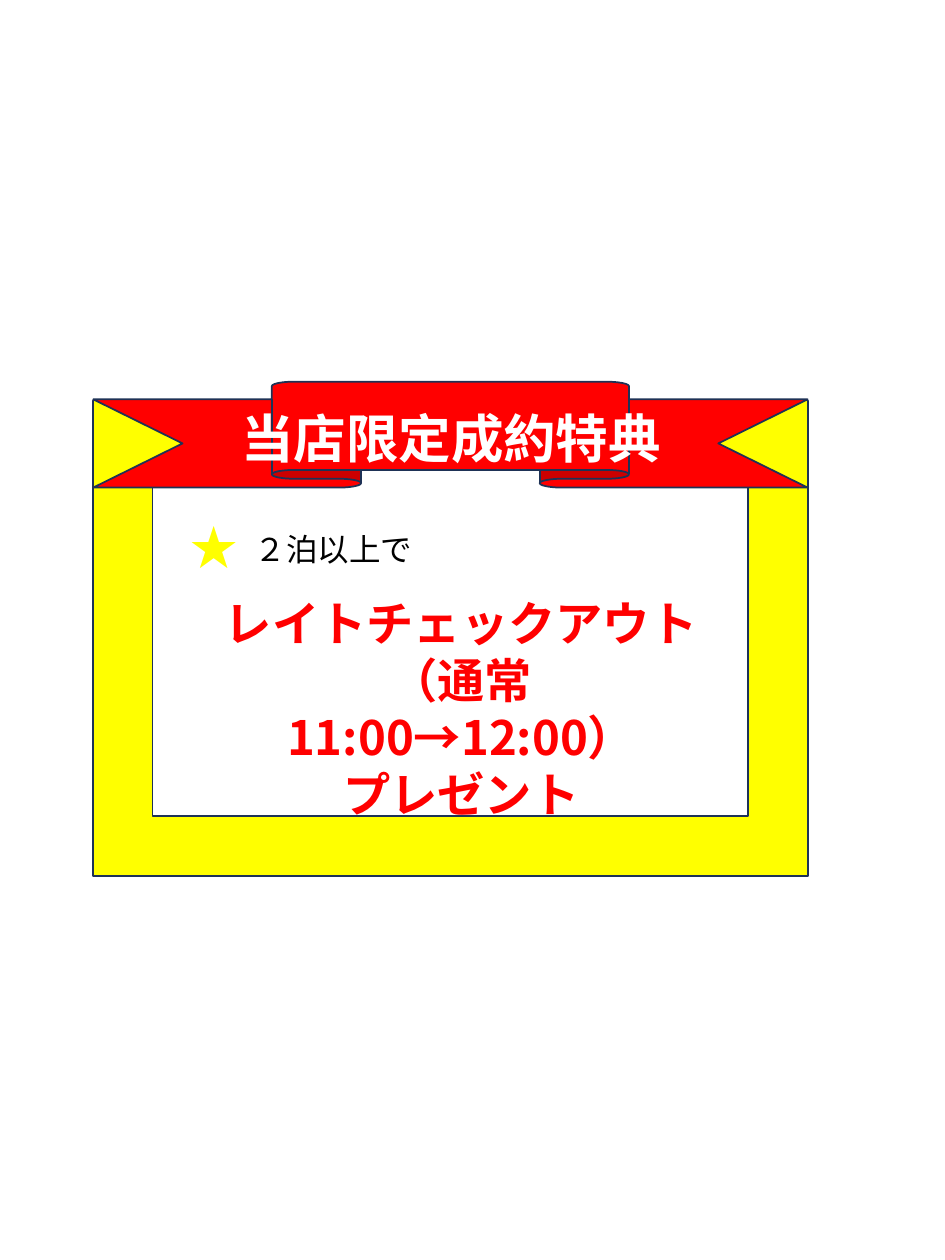
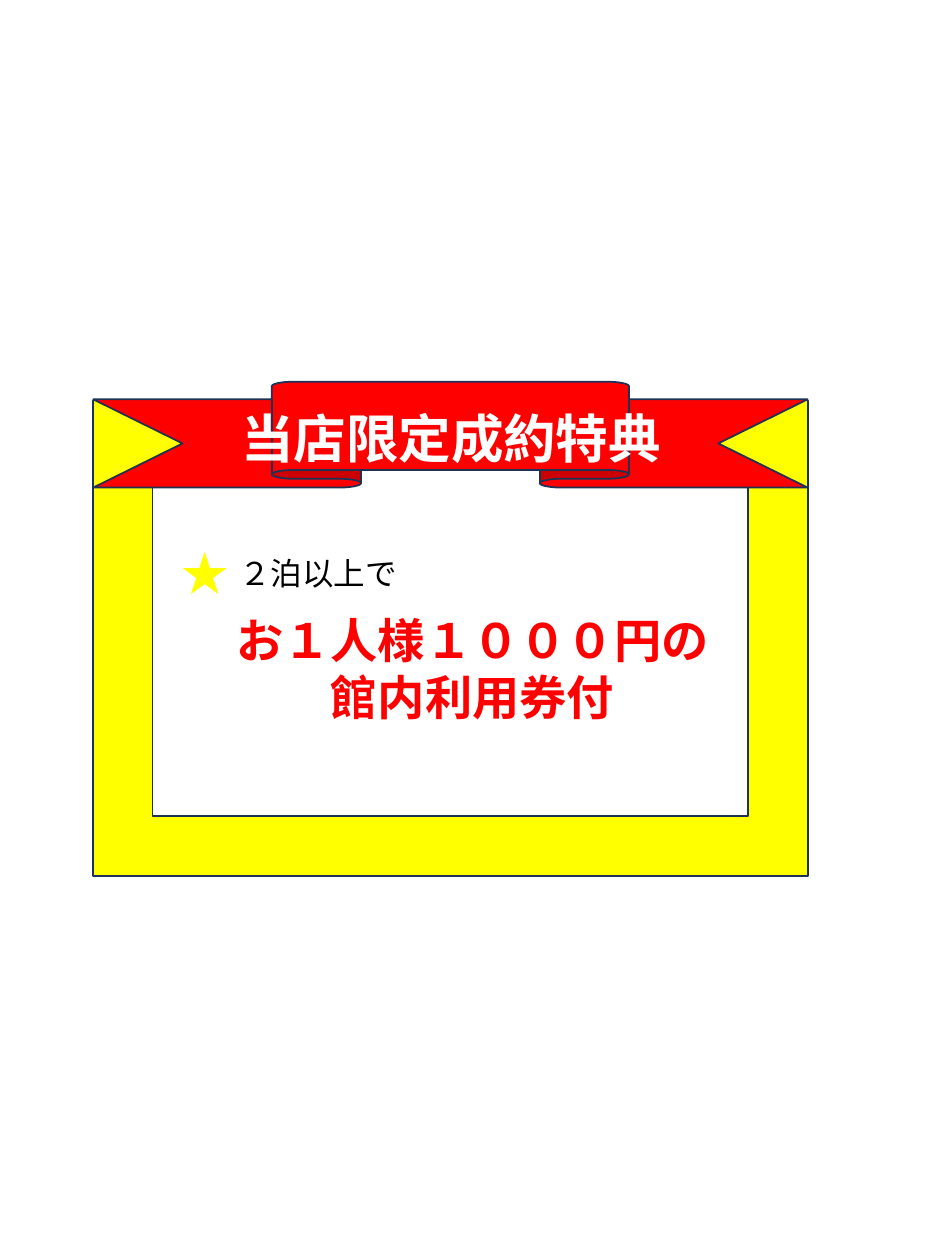
from dataclasses import dataclass

from lxml.etree import SubElement
from pptx import Presentation
from pptx.dml.color import RGBColor
from pptx.enum.shapes import MSO_SHAPE
from pptx.enum.text import MSO_AUTO_SIZE, PP_ALIGN
from pptx.oxml.ns import qn
from pptx.slide import Slide
from pptx.util import Inches, Pt

FACE = "Noto Sans CJK JP"
HUES = {
    "yellow": "FFFF00",
    "red": "FF0000",
    "navy": "1E3256",
    "white": "FFFFFF",
    "black": "000000",
}
FRAME = {
    "word_wrap": True,
    "auto_size": MSO_AUTO_SIZE.SHAPE_TO_FIT_TEXT,
    "margin_left": Inches(0.07),
    "margin_right": Inches(0.07),
    "margin_top": Inches(0.04),
    "margin_bottom": Inches(0.04),
}


@dataclass(frozen=True)
class Style:
    size: int
    hue: str
    bold: bool = True


@dataclass(frozen=True)
class Box:
    left: float
    top: float
    width: float
    height: float

    def place(self) -> list[int]:
        return [Inches(n) for n in (self.left, self.top, self.width, self.height)]


@dataclass(frozen=True)
class Panel:
    kind: MSO_SHAPE
    box: Box
    hue: str


@dataclass(frozen=True)
class Label:
    lines: tuple[str, ...]
    box: Box
    style: Style


@dataclass(frozen=True)
class Offer:
    star: Box
    terms: Box
    gift: Box
    lines: tuple[str, ...]


TITLE = Style(30, "white")
STAR = Style(27, "yellow")
TERMS = Style(18, "black", False)
GIFT = Style(27, "red")

PANELS = (
    Panel(MSO_SHAPE.FRAME, Box(0.74, 3.18, 5.67, 3.77), "yellow"),
    Panel(MSO_SHAPE.UP_RIBBON, Box(0.74, 3.03, 5.67, 0.84), "red"),
)
BANNER = Label(("当店限定成約特典",), Box(1.82, 3.18, 3.52, 0.58), TITLE)
OFFERS = (
    Offer(
        Box(1.35, 4.07, 0.7, 0.53),
        Box(1.94, 4.17, 1.41, 0.38),
        Box(1.69, 4.68, 3.94, 1.44),
        ("レイトチェックアウト", "（通常11:00→12:00）", "プレゼント"),
    ),
    Offer(
        Box(1.28, 4.28, 0.7, 0.53),
        Box(1.82, 4.36, 1.41, 0.38),
        Box(1.78, 4.81, 3.94, 0.98),
        ("お１人様１０００円の", "館内利用券付"),
    ),
)


def tint(name: str) -> RGBColor:
    return RGBColor.from_string(HUES[name])


def add_panel(slide: Slide, panel: Panel) -> None:
    shape = slide.shapes.add_shape(panel.kind, *panel.box.place())
    shape.shadow.inherit = False
    shape.fill.solid()
    shape.fill.fore_color.rgb = tint(panel.hue)
    shape.line.color.rgb = tint("navy")
    shape.line.width = Pt(1)


def add_label(slide: Slide, label: Label) -> None:
    frame = slide.shapes.add_textbox(*label.box.place()).text_frame
    for key, value in FRAME.items():
        setattr(frame, key, value)
    style = label.style
    look = {"name": FACE, "size": Pt(style.size), "bold": style.bold}
    for row, line in enumerate(label.lines):
        para = frame.add_paragraph() if row else frame.paragraphs[0]
        para.alignment = PP_ALIGN.CENTER
        run = para.add_run()
        run.text = line
        for key, value in look.items():
            setattr(run.font, key, value)
        run.font.color.rgb = tint(style.hue)
        SubElement(run._r.get_or_add_rPr(), qn("a:ea"), typeface=FACE)


def add_offer(slide: Slide, offer: Offer) -> None:
    for panel in PANELS:
        add_panel(slide, panel)
    labels = (
        BANNER,
        Label(("★",), offer.star, STAR),
        Label(("２泊以上で",), offer.terms, TERMS),
        Label(offer.lines, offer.gift, GIFT),
    )
    for label in labels:
        add_label(slide, label)


def main() -> None:
    deck = Presentation()
    deck.slide_width, deck.slide_height = Inches(7.5), Inches(10)
    blank = deck.slide_layouts[6]
    for offer in OFFERS:
        add_offer(deck.slides.add_slide(blank), offer)
    deck.save("out.pptx")


if __name__ == "__main__":
    main()
